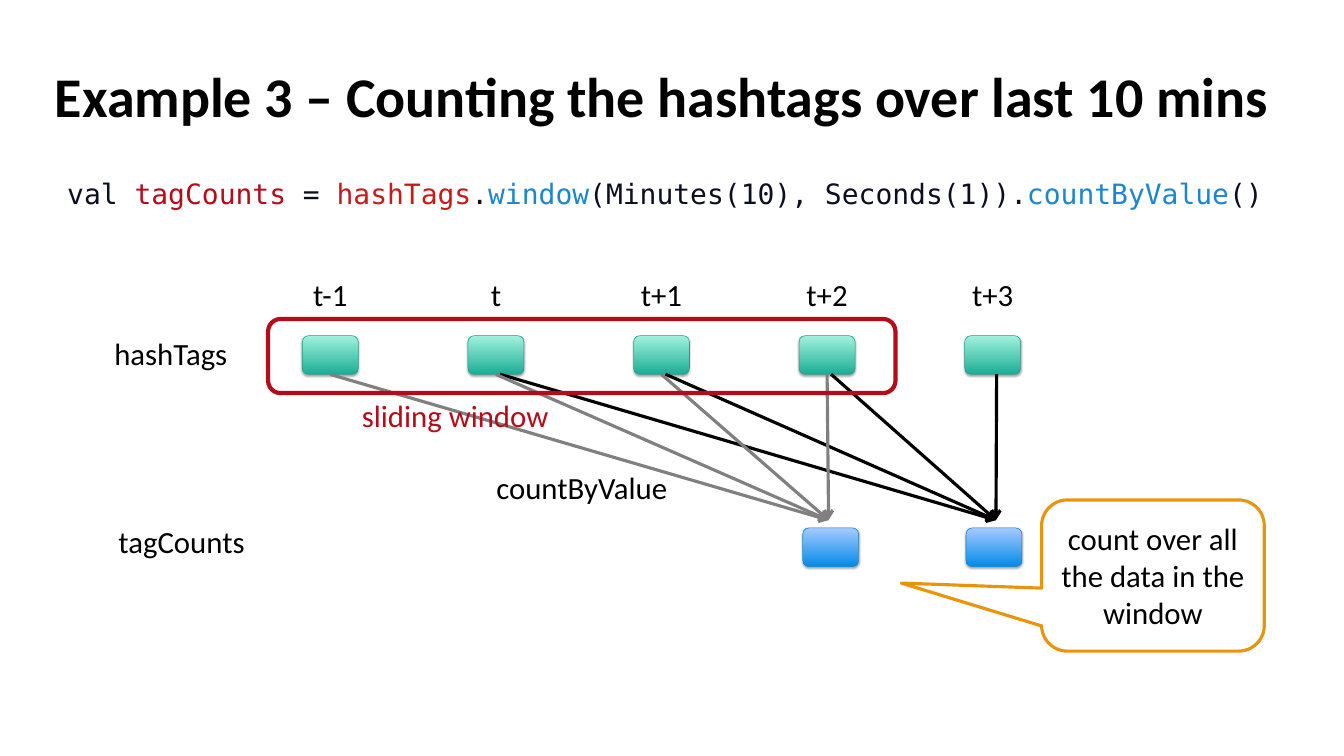
import dataclasses

import lxml.etree
import pptx
import pptx.dml.color
import pptx.enum.shapes
import pptx.enum.text
import pptx.oxml.ns
import pptx.util

SHAPE = pptx.enum.shapes.MSO_SHAPE
ALIGN = pptx.enum.text.PP_ALIGN
ANCHOR = pptx.enum.text.MSO_ANCHOR
qn = pptx.oxml.ns.qn


@dataclasses.dataclass(frozen=True)
class Theme:
    ink: str = "000000"
    code: str = "0C0F20"
    red: str = "B50B1B"
    code_red: str = "C61B1B"
    code_blue: str = "1D86CD"
    past: str = "808080"
    orange: str = "E8950E"
    paper: str = "FFFFFF"
    green: tuple = ("1BAD94", "A1F2DD", "289B88")  # bottom, top, outline
    blue: tuple = ("038BE7", "A6CAFF", "1884CD")
    font: str = "Calibri"
    mono: str = "DejaVu Sans Mono"
    title_size: int = 80
    code_size: int = 40
    label_size: int = 44


THEME = Theme()


@dataclasses.dataclass(frozen=True)
class Box:
    left: float
    top: float
    width: float
    height: float

    def share(self, x, y, w, h):
        """Box inside this one, given in percent of its sides."""
        return Box(self.left + self.width * x / 100, self.top + self.height * y / 100,
                   self.width * w / 100, self.height * h / 100)

    def column(self, i, count):
        return self.share(100 * i / count, 0, 100 / count, 100)

    def point(self, x, y):
        p = self.share(x, y, 0, 0)
        return int(p.left), int(p.top)

    def emu(self):
        return [int(v) for v in (self.left, self.top, self.width, self.height)]


def rgb(value):
    return pptx.dml.color.RGBColor.from_string(value)


def write(sp, runs, *, size=THEME.label_size, color=THEME.ink, font=THEME.font, bold=False,
          align=ALIGN.LEFT, anchor=ANCHOR.TOP, wrap=True, inset=(0.1, 0.05)):
    """Fill a shape with one paragraph; runs is a string or (text, colour) pairs."""
    tf = sp.text_frame
    tf.auto_size = pptx.enum.text.MSO_AUTO_SIZE.NONE
    tf.word_wrap = wrap
    tf.vertical_anchor = anchor
    tf.margin_left = tf.margin_right = pptx.util.Inches(inset[0])
    tf.margin_top = tf.margin_bottom = pptx.util.Inches(inset[1])
    p = tf.paragraphs[0]
    p.alignment = align
    p.space_before = pptx.util.Pt(0)
    for text, run_color in [(runs, color)] if isinstance(runs, str) else runs:
        r = p.add_run()
        r.text = text
        r.font.name, r.font.size, r.font.bold = font, pptx.util.Pt(size), bold
        r.font.color.rgb = rgb(run_color)


def label(s, box, text, **style):
    write(s.shapes.add_textbox(*box.emu()), text, **style)


def outlined(s, kind, box, line, width):
    sp = s.shapes.add_shape(kind, *box.emu())
    sp.line.color.rgb = rgb(line)
    sp.line.width = pptx.util.Pt(width)
    sp.shadow.inherit = False
    sp.fill.background()
    return sp


def batch(s, box, colors):
    """Glossy block for one batch of a stream."""
    sp = outlined(s, SHAPE.FLOWCHART_ALTERNATE_PROCESS, box, colors[2], 0.75)
    sp.fill.gradient()
    sp.fill.gradient_angle = 90
    for stop, color, position in zip(sp.fill.gradient_stops, colors, (0, 1)):
        stop.color.rgb = rgb(color)
        stop.position = position
    effects = sp.element.spPr.find(qn("a:effectLst"))
    shadow = lxml.etree.SubElement(
        effects, qn("a:outerShdw"), blurRad=str(pptx.util.Pt(3.1)),
        dist=str(pptx.util.Pt(1.8)), dir="5400000", rotWithShape="0")
    black = lxml.etree.SubElement(shadow, qn("a:srgbClr"), val="000000")
    lxml.etree.SubElement(black, qn("a:alpha"), val="35000")
    return sp


def arrow(s, start, end, color, source=None):
    c = s.shapes.add_connector(pptx.enum.shapes.MSO_CONNECTOR.STRAIGHT, *start, *end)
    if source is not None:
        c.begin_connect(source, 2)
    c.line.color.rgb = rgb(color)
    c.line.width = pptx.util.Pt(4.5)
    spPr = c.element.spPr
    lxml.etree.SubElement(spPr.find(qn("a:ln")), qn("a:tailEnd"), type="arrow")
    lxml.etree.SubElement(spPr, qn("a:effectLst"))


def heading(s, box):
    sp = s.shapes.title
    sp.left, sp.top, sp.width, sp.height = box.emu()
    write(sp, "Example 3 – Counting the hashtags over last 10 mins", size=THEME.title_size,
          bold=True, anchor=ANCHOR.MIDDLE, inset=(0.06, 0.06))


def code_line(s, box):
    sp = s.placeholders[1]
    sp.left, sp.top, sp.width, sp.height = box.emu()
    write(sp, [("val ", THEME.code), ("tagCounts ", THEME.red), ("= ", THEME.code),
               ("hashTags", THEME.code_red), (".", THEME.code),
               ("window", THEME.code_blue),
               ("(Minutes(10), Seconds(1)).", THEME.code),
               ("countByValue", THEME.code_blue), ("()", THEME.code)],
          size=THEME.code_size, font=THEME.mono, inset=(0, 0))
    pPr = sp.element.find(".//" + qn("a:pPr"))
    pPr.set("marL", "0")
    pPr.set("indent", "0")
    lxml.etree.SubElement(pPr, qn("a:buNone"))


def hashtag_row(s, box):
    """Name column, then one time label and batch per column; returns the batches."""
    times = ("t-1", "t", "t+1", "t+2", "t+3")
    label(s, box.column(0, 6).share(16.5, 49.6, 76.7, 35.3), "hashTags", wrap=False)
    batches = []
    for i, time in enumerate(times, 1):
        cell = box.column(i, 6)
        label(s, cell.share(27, 0, 46, 35.3), time, align=ALIGN.CENTER, inset=(0, 0.05))
        batches.append(batch(s, cell.share(33.1, 52.1, 33.8, 32.35), THEME.green))
    return batches


def count_row(s, box):
    label(s, box.column(0, 6).share(19, 0, 83.7, 93), "tagCounts", wrap=False)
    for i, left in ((4, 35.3), (5, 33.9)):
        batch(s, box.column(i, 6).share(left, 16, 33.8, 85.5), THEME.blue)


def window_arrows(s, box, batches):
    """Each count gathers the four batches of its window."""
    now = box.point(92, 100)
    for i in range(2, 6):
        arrow(s, box.column(i, 6).point(52.4, 0), now, THEME.ink)
    before = box.point(75.15, 100)
    for i, source in enumerate(batches[:4], 1):
        arrow(s, box.column(i, 6).point(50, 0), before, THEME.past, source)


def window_frame(s, box):
    outlined(s, SHAPE.ROUNDED_RECTANGLE, box, THEME.red, 6)


def callout(s, box):
    sp = outlined(s, SHAPE.ROUNDED_RECTANGULAR_CALLOUT, box, THEME.orange, 4.5)
    sp.fill.solid()
    sp.fill.fore_color.rgb = rgb(THEME.paper)
    for i, value in enumerate((-1.13, 0.05, 0.17)):
        sp.adjustments[i] = value
    write(sp, "count over all the data in the window", align=ALIGN.CENTER,
          anchor=ANCHOR.MIDDLE, inset=(0, 0.05))


def main():
    prs = pptx.Presentation()
    prs.slide_width, prs.slide_height = pptx.util.Inches(26.67), pptx.util.Inches(15)
    s = prs.slides.add_slide(prs.slide_layouts[1])
    page = Box(0, 0, prs.slide_width, prs.slide_height)

    heading(s, page.share(3.86, 6.73, 91.83, 11.6))
    code_line(s, page.share(5, 23.33, 93.55, 11.67))
    diagram = page.share(6.1, 0, 73.92, 100)
    count_row(s, diagram.share(0, 68.87, 100, 6))
    batches = hashtag_row(s, diagram.share(0, 36.13, 100, 15.87))
    window_arrows(s, diagram.share(0, 49.5, 100, 19.3), batches)
    window_frame(s, page.share(19.95, 42.2, 46.68, 9.8))
    label(s, page.share(26.55, 52.13, 14.77, 5.6), "sliding window", color=THEME.red, wrap=False)
    label(s, page.share(36.56, 61.67, 13.8, 5.6), "countByValue", wrap=False)
    callout(s, page.share(77.5, 66.13, 16.57, 20))
    prs.save("out.pptx")


if __name__ == "__main__":
    main()
